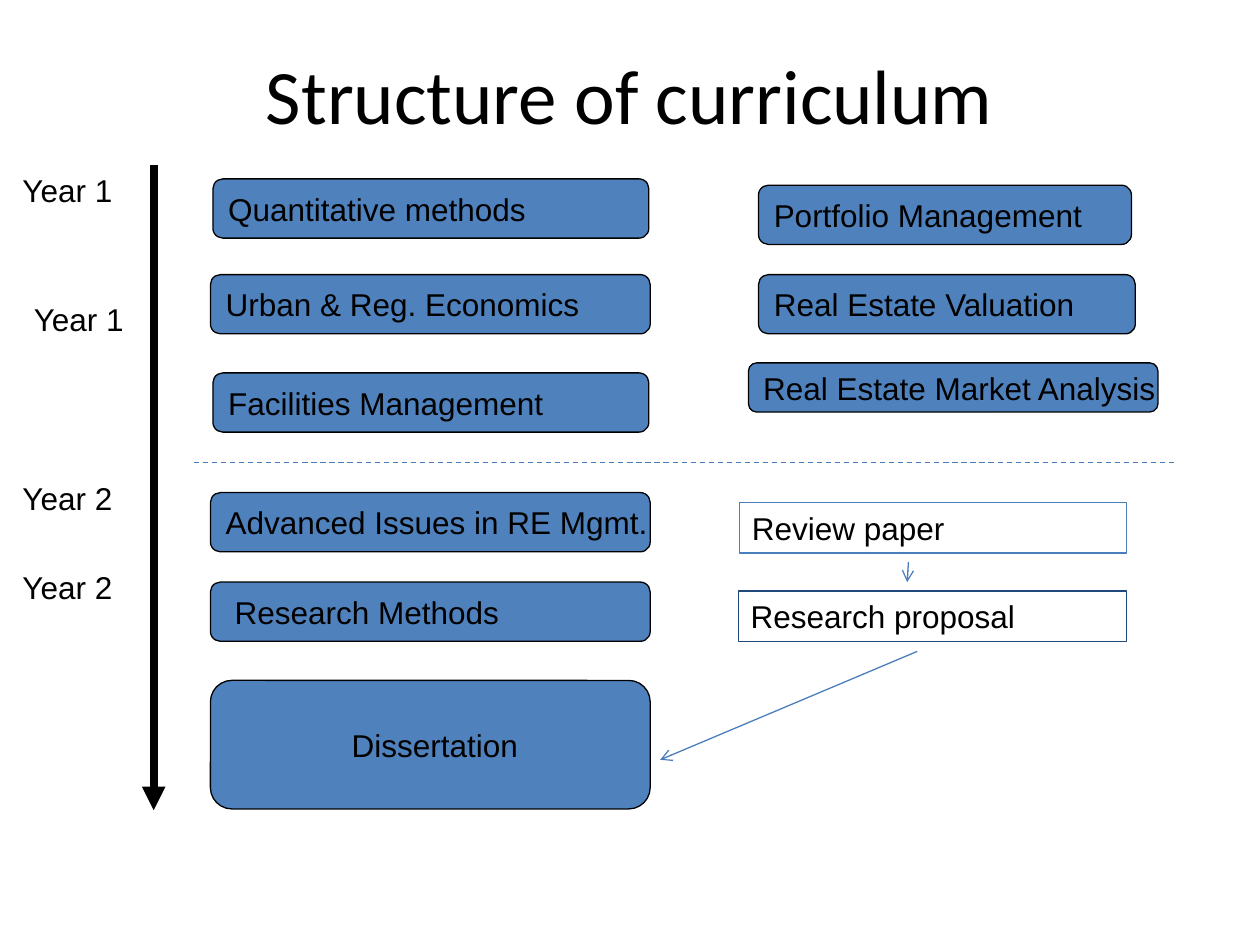
from lxml import etree
from pptx import Presentation
from pptx.dml.color import RGBColor
from pptx.enum import dml, shapes, text
from pptx.oxml import ns
from pptx.util import Inches, Pt

BLUE, EDGE, NAVY, BLACK = "4F81BD", "4B7EBC", "1F497D", "000000"
LEFT, MID = text.PP_ALIGN.LEFT, text.PP_ALIGN.CENTER


def color(code):
    return RGBColor.from_string(code)


def write(shape, words, size=18, face="Arial", align=LEFT, wrap=False):
    frame = shape.text_frame
    frame.word_wrap = wrap
    frame.text = words
    para = frame.paragraphs[0]
    para.alignment = align
    para.font.size = Pt(size)
    para.font.name = face
    para.font.color.rgb = color(BLACK)
    return frame


prs = Presentation()
prs.slide_width, prs.slide_height = Inches(10), Inches(7.5)
slide = prs.slides.add_slide(prs.slide_layouts[6])

title = slide.shapes.add_textbox(Inches(0.5), Inches(0.23), Inches(9), Inches(1.02))
frame = write(title, "Structure of curriculum", 44, "Calibri", MID, True)
frame.vertical_anchor = text.MSO_ANCHOR.MIDDLE

years = [
    ("Year 1", 0.08, 1.31),
    ("Year 1", 0.17, 2.33),
    ("Year 2", 0.08, 3.75),
    ("Year 2", 0.08, 4.46),
]
for words, x, y in years:
    box = slide.shapes.add_textbox(Inches(x), Inches(y), Inches(0.94), Inches(0.4))
    write(box, words)

# Name, left, top, width, height, alignment, extra indent
courses = [
    ("Quantitative methods", 1.69, 1.42, 3.46, 0.47, LEFT, 0),
    ("Urban & Reg. Economics", 1.67, 2.18, 3.49, 0.47, LEFT, 0),
    ("Facilities Management", 1.69, 2.96, 3.46, 0.47, LEFT, 0),
    ("Portfolio Management", 6.02, 1.47, 2.96, 0.47, LEFT, 0),
    ("Real Estate Valuation", 6.02, 2.18, 2.99, 0.47, LEFT, 0),
    ("Real Estate Market Analysis", 5.94, 2.88, 3.25, 0.39, LEFT, 0),
    ("Advanced Issues in RE Mgmt.", 1.67, 3.91, 3.49, 0.47, LEFT, 0),
    ("Research Methods", 1.67, 4.62, 3.49, 0.47, LEFT, 0.07),
    ("Dissertation", 1.67, 5.4, 3.49, 1.02, MID, 0.07),
]
for words, x, y, w, h, align, indent in courses:
    box = slide.shapes.add_shape(
        shapes.MSO_SHAPE.FLOWCHART_ALTERNATE_PROCESS,
        Inches(x), Inches(y), Inches(w), Inches(h))
    box.shadow.inherit = False
    box.fill.solid()
    box.fill.fore_color.rgb = color(BLUE)
    box.line.color.rgb = color(BLACK)
    box.line.width = Pt(0.75)
    frame = write(box, words, align=align)
    frame.vertical_anchor = text.MSO_ANCHOR.MIDDLE
    frame.margin_left = Inches(0.1 + indent)

papers = [
    ("Review paper", 5.87, 3.99, 3.07, EDGE),
    ("Research proposal", 5.86, 4.69, 3.08, NAVY),
]
for words, x, y, w, edge in papers:
    box = slide.shapes.add_shape(
        shapes.MSO_SHAPE.RECTANGLE, Inches(x), Inches(y), Inches(w), Inches(0.4))
    box.shadow.inherit = False
    box.fill.background()
    box.line.color.rgb = color(edge)
    box.line.width = Pt(0.75)
    frame = write(box, words, wrap=True)
    frame.vertical_anchor = text.MSO_ANCHOR.TOP

# Start, end, colour, width, dash, arrowhead
lines = [
    (1.22, 1.31, 1.22, 6.43, BLACK, 4.5, None, "triangle"),
    (1.54, 3.67, 9.33, 3.67, EDGE, 0.75, dml.MSO_LINE.DASH, None),
    (7.21, 4.46, 7.2, 4.62, EDGE, 0.75, None, "arrow"),
    (7.28, 5.17, 5.24, 6.03, EDGE, 0.75, None, "arrow"),
]
for x1, y1, x2, y2, code, width, dash, head in lines:
    line = slide.shapes.add_connector(
        shapes.MSO_CONNECTOR.STRAIGHT, Inches(x1), Inches(y1), Inches(x2), Inches(y2))
    line.line.color.rgb = color(code)
    line.line.width = Pt(width)
    if dash:
        line.line.dash_style = dash
    if head:
        etree.SubElement(line.line._get_or_add_ln(), ns.qn("a:tailEnd"), type=head)
    etree.SubElement(line._element.spPr, ns.qn("a:effectLst"))

prs.save("out.pptx")
